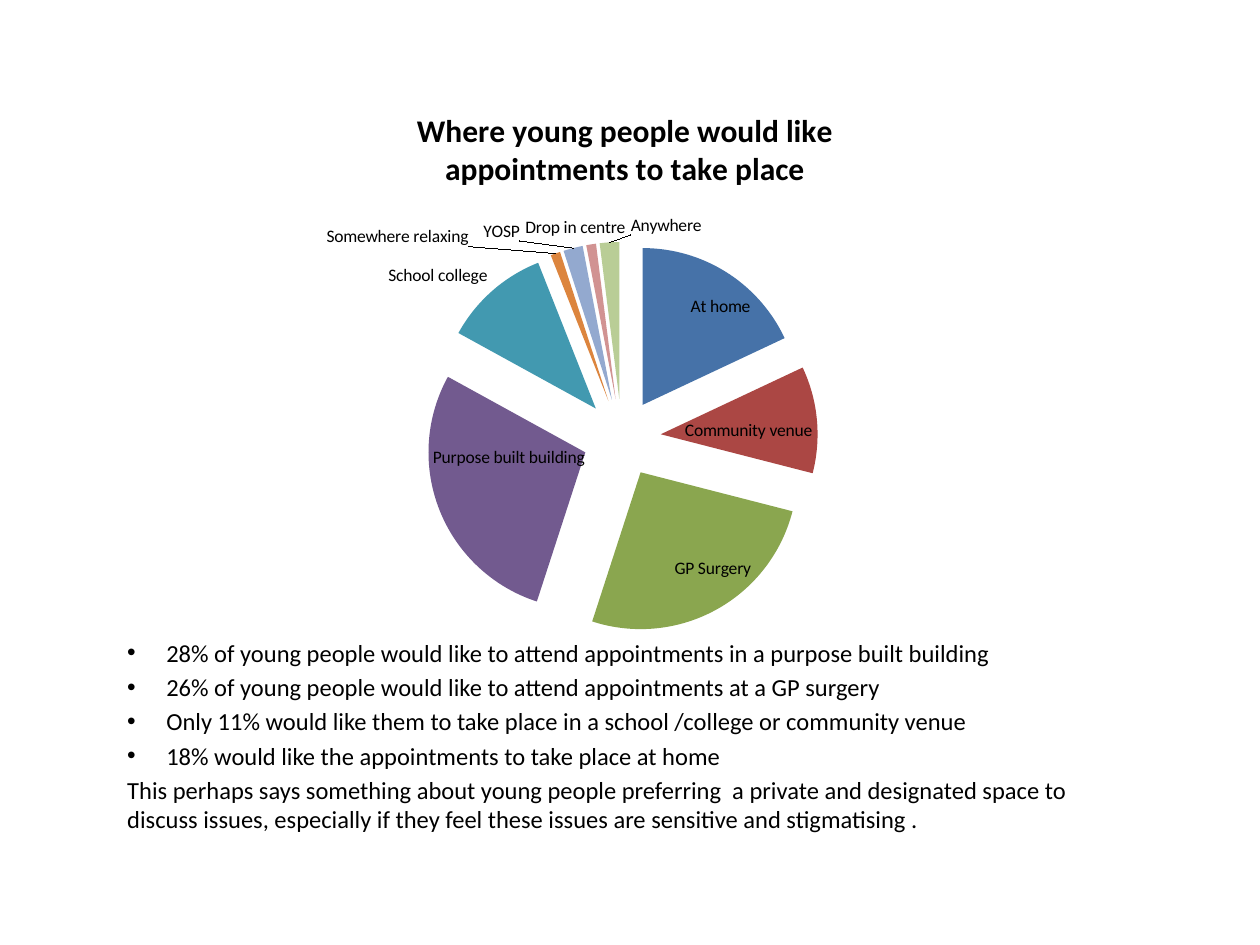
from pptx import Presentation
from pptx.chart.data import CategoryChartData
from pptx.dml.color import RGBColor
from pptx.enum.chart import XL_CHART_TYPE as ChartType, XL_LABEL_POSITION as LabelPosition
from pptx.enum.text import MSO_ANCHOR as Anchor, MSO_AUTO_SIZE as AutoSize
from pptx.oxml import parse_xml
from pptx.oxml.ns import nsdecls, qn
from pptx.util import Inches, Pt

FONT = "Calibri"
TITLE = "Where young people would like appointments to take place"
VENUES = [
    ("At home", 18, "4672A8"),
    ("Community venue", 11, "AB4744"),
    ("GP Surgery", 26, "8AA64F"),
    ("Purpose built building", 28, "725A8F"),
    ("School college", 11, "4299B0"),
    ("Somewhere relaxing", 1, "DC853E"),
    ("YOSP", 2, "93A9CF"),
    ("Drop in centre", 1, "D19392"),
    ("Anywhere", 2, "B9CD96"),
]
FINDINGS = [
    "28% of young people would like to attend appointments in a purpose built building",
    "26% of young people would like to attend appointments at a GP surgery",
    "Only 11% would like them to take place in a school /college or community venue",
    "18% would like the appointments to take place at home",
]
CONCLUSION = (
    "This perhaps says something about young people preferring  a private and designated space "
    "to discuss issues, especially if they feel these issues are sensitive and stigmatising ."
)
CHART_AREA = [Inches(n) for n in (1.96, 0.67, 6, 4.5)]
BODY_AREA = [Inches(n) for n in (0.91, 5.01, 8.19, 1.74)]
INDENT = Inches(0.31)
EXPLOSION = 25


def color(code):
    return RGBColor.from_string(code)


def format_font(font, size, bold=False, code="000000"):
    font.name = FONT
    font.size = Pt(size)
    font.bold = bold
    font.color.rgb = color(code)


def write(para, text, size=14, bold=False, bullet=None):
    span = para.add_run()
    span.text = text
    format_font(span.font, size, bold)
    if bullet is not None:
        props = para._p.get_or_add_pPr()
        props.set("marL", str(INDENT if bullet else 0))
        props.set("indent", str(-INDENT if bullet else 0))
        mark = 'buChar {} char="•"' if bullet else "buNone {}"
        props.append(parse_xml(f"<a:{mark.format(nsdecls('a'))}/>"))


def add_findings(page):
    body = page.placeholders[1]
    body.left, body.top, body.width, body.height = BODY_AREA
    frame = body.text_frame
    frame.word_wrap = True
    frame.auto_size = AutoSize.NONE
    frame.vertical_anchor = Anchor.TOP
    for index, text in enumerate(FINDINGS + [CONCLUSION]):
        para = frame.add_paragraph() if index else frame.paragraphs[0]
        write(para, text, bullet=index < len(FINDINGS))


def add_venue_chart(page):
    names, values, codes = zip(*VENUES)
    data = CategoryChartData()
    data.categories = names
    data.add_series("Series 1", values)
    chart = page.shapes.add_chart(ChartType.PIE, *CHART_AREA, data).chart
    format_font(chart.font, 10)
    chart.has_legend = False
    chart.has_title = True
    write(chart.chart_title.text_frame.paragraphs[0], TITLE, size=18, bold=True)

    plot = chart.plots[0]
    plot.vary_by_categories = True
    series = plot.series[0]
    for index, code in enumerate(codes):
        fill = series.points[index].format.fill
        fill.solid()
        fill.fore_color.rgb = color(code)
    explosion = parse_xml(f'<c:explosion {nsdecls("c")} val="{EXPLOSION}"/>')
    series._element.find(qn("c:dPt")).addprevious(explosion)

    plot.has_data_labels = True
    labels = plot.data_labels
    labels.show_category_name = True
    labels.show_value = False
    labels.show_percentage = False
    labels.position = LabelPosition.BEST_FIT
    format_font(labels.font, 10)


def main():
    deck = Presentation()
    deck.slide_width, deck.slide_height = Inches(10), Inches(7.5)
    page = deck.slides.add_slide(deck.slide_layouts[1])
    title = page.shapes.title._element
    title.getparent().remove(title)
    add_findings(page)
    add_venue_chart(page)
    deck.save("out.pptx")


if __name__ == "__main__":
    main()
